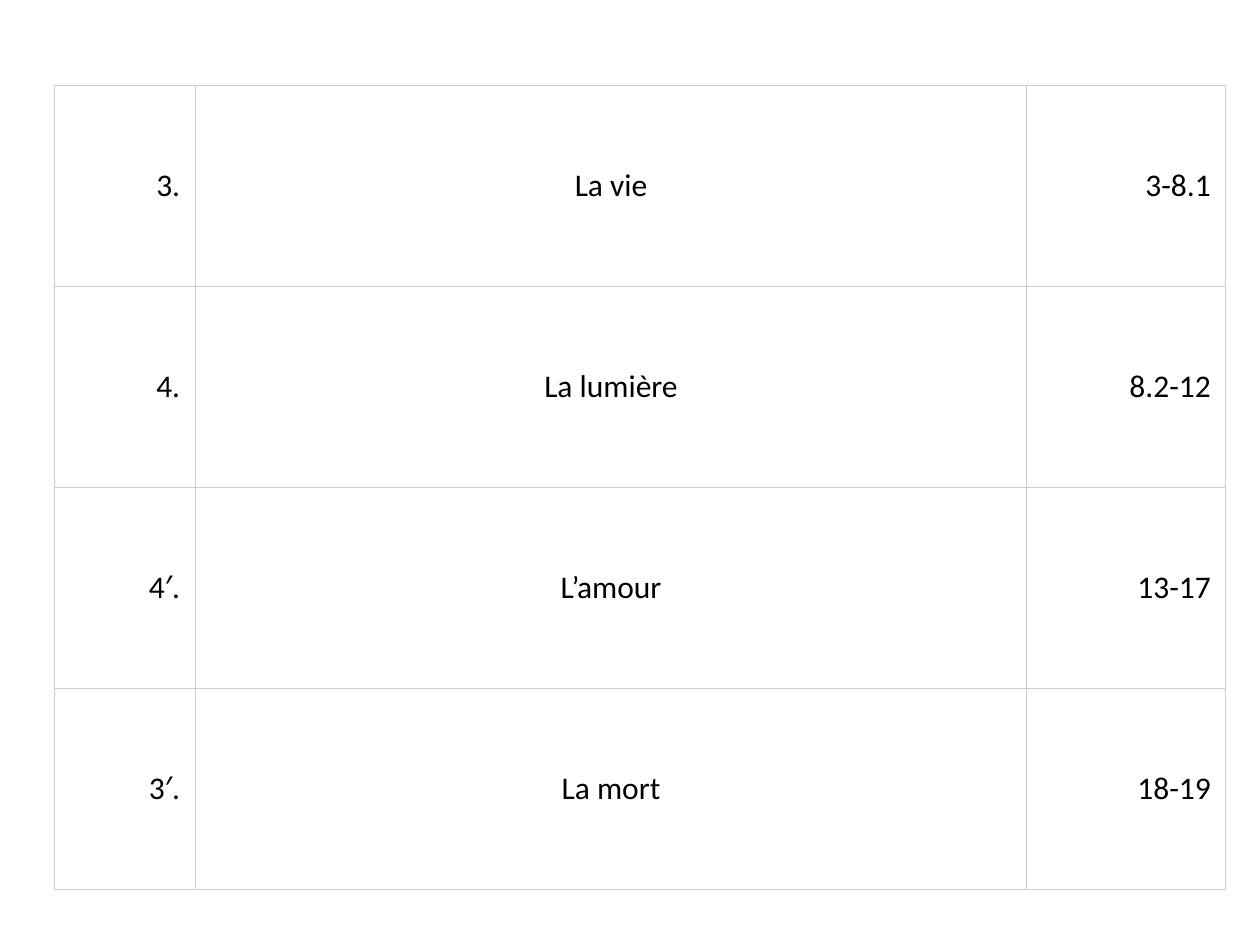
from pptx import Presentation
from pptx.dml.color import RGBColor
from pptx.enum.text import MSO_ANCHOR, PP_ALIGN
from pptx.util import Inches, Pt
from lxml.etree import SubElement
from pptx.oxml.ns import qn

COLORS = {"text": "000000", "cell": "FFFFFF", "border": "CCCCCC"}
ROWS = [
    ("3.", "La vie", "3-8.1"),
    ("4.", "La lumière", "8.2-12"),
    ("4′.", "L’amour", "13-17"),
    ("3′.", "La mort", "18-19"),
]
WIDTHS = [1.12, 6.6, 1.58]
ALIGNS = [PP_ALIGN.RIGHT, PP_ALIGN.CENTER, PP_ALIGN.RIGHT]
HEIGHT = 6.38


def add_borders(cell):
    tc_pr = cell._tc.get_or_add_tcPr()
    for side in ("lnL", "lnR", "lnT", "lnB"):
        ln = SubElement(tc_pr, qn(f"a:{side}"), w=str(Pt(0.75)))
        fill = SubElement(ln, qn("a:solidFill"))
        SubElement(fill, qn("a:srgbClr"), val=COLORS["border"])


prs = Presentation()
prs.slide_width, prs.slide_height = Inches(10), Inches(7.5)
s = prs.slides.add_slide(prs.slide_layouts[6])

# Table grid
table = s.shapes.add_table(
    len(ROWS), len(WIDTHS), Inches(0.43), Inches(0.68),
    Inches(sum(WIDTHS)), Inches(HEIGHT),
).table
table.first_row = False
table.horz_banding = False
for column, width in zip(table.columns, WIDTHS):
    column.width = Inches(width)
for row in table.rows:
    row.height = Inches(HEIGHT / len(ROWS))

# Number, theme and verses of each section
for i, texts in enumerate(ROWS):
    for j, text in enumerate(texts):
        cell = table.cell(i, j)
        add_borders(cell)
        cell.fill.solid()
        cell.fill.fore_color.rgb = RGBColor.from_string(COLORS["cell"])
        cell.vertical_anchor = MSO_ANCHOR.MIDDLE
        cell.margin_left = cell.margin_right = Inches(0.12)
        cell.margin_top = cell.margin_bottom = Inches(0.12)
        p = cell.text_frame.paragraphs[0]
        p.alignment = ALIGNS[j]
        r = p.add_run()
        r.text = text
        r.font.name = "Calibri"
        r.font.size = Pt(18)
        r.font.color.rgb = RGBColor.from_string(COLORS["text"])

prs.save("out.pptx")
